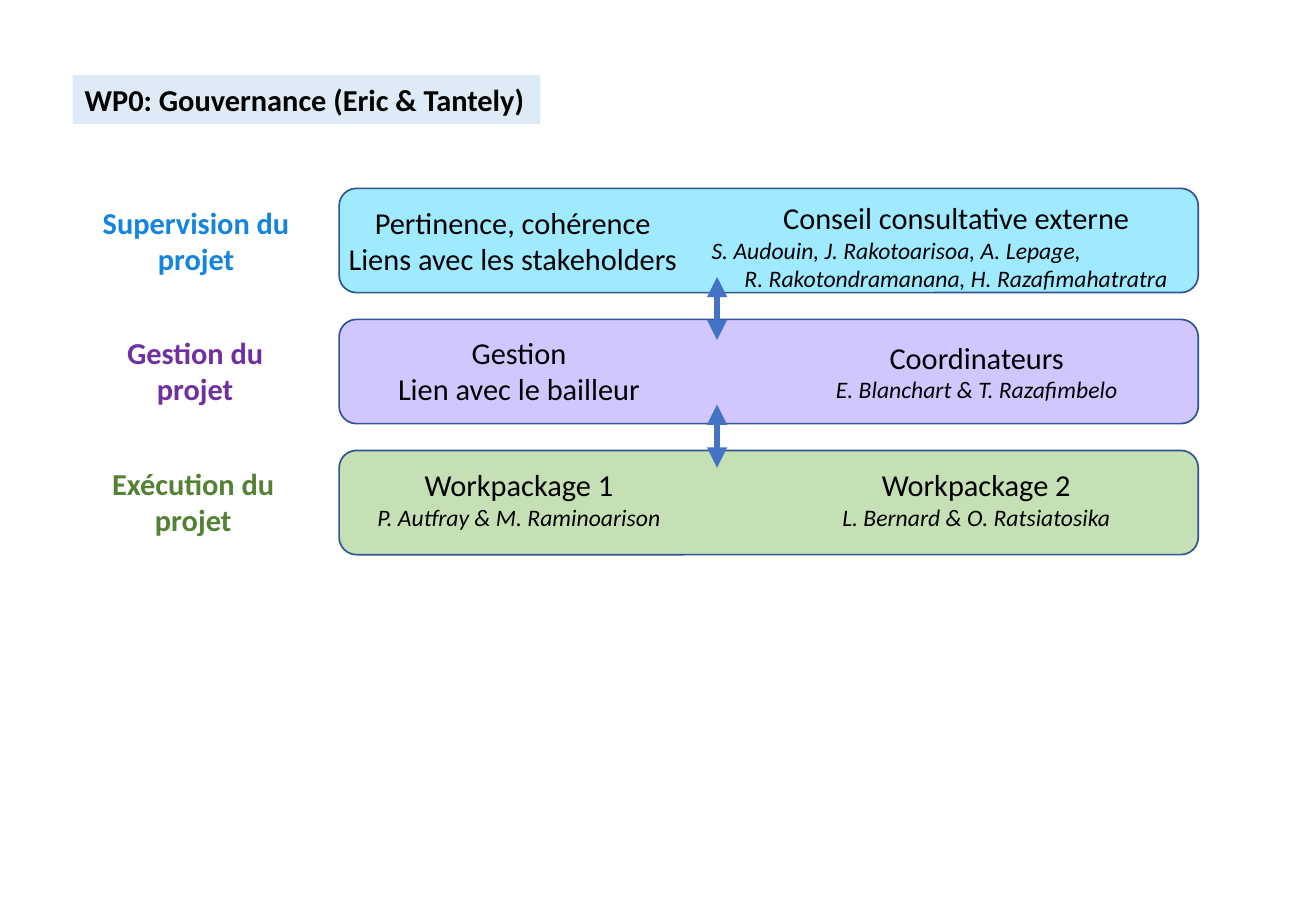
from typing import NamedTuple

from lxml import etree
from pptx import Presentation
from pptx.dml.color import RGBColor
from pptx.enum import shapes, text
from pptx.oxml import ns
from pptx.util import Cm, Pt

BLACK = RGBColor(0, 0, 0)
TITLE_FILL = RGBColor(0xDE, 0xEB, 0xF7)
BAND_EDGE = RGBColor(0x32, 0x54, 0x91)
ARROW = RGBColor(0x44, 0x72, 0xC4)
CYAN = RGBColor(0x9F, 0xEA, 0xFF)
LILAC = RGBColor(0xD1, 0xC7, 0xFE)
LEAF = RGBColor(0xC5, 0xE0, 0xB4)
BLUE = RGBColor(0x13, 0x84, 0xDF)
PURPLE = RGBColor(0x70, 0x30, 0xA0)
GREEN = RGBColor(0x54, 0x82, 0x35)

BAND_LEFT, BAND_TOP, BAND_WIDTH, BAND_HEIGHT = 7.09, 3.94, 17.96, 2.18
BAND_PITCH = 2.74
LABEL_WIDTH, ROLE_WIDTH, PEOPLE_WIDTH = 4.7, 7.9, 11.13
ARROW_X, ARROW_LENGTH = 7.9, 1.32

HEADING = {"size": 18}
NAMES = {"size": 14, "italic": True}


class Line(NamedTuple):
    wording: str
    style: dict
    left_indent: float | None = None


class Block(NamedTuple):
    center: float
    top: float
    lines: list


class Level(NamedTuple):
    fill: RGBColor
    color: RGBColor
    label: Block
    role: Block
    people: Block


LEVELS = [
    Level(CYAN, BLUE,
          Block(-2.99, 0.2, [Line("Supervision du projet", HEADING)]),
          Block(3.63, 0.2, [Line("Pertinence, cohérence", HEADING),
                            Line("Liens avec les stakeholders", HEADING)]),
          Block(12.9, 0.1, [Line("Conseil consultative externe", HEADING),
                            Line("S. Audouin, J. Rakotoarisoa, A. Lepage,", NAMES, 0.2),
                            Line("R. Rakotondramanana, H. Razafimahatratra", NAMES)])),
    Level(LILAC, PURPLE,
          Block(-3.01, 0.18, [Line("Gestion du projet", HEADING)]),
          Block(3.76, 0.18, [Line("Gestion", HEADING),
                             Line("Lien avec le bailleur", HEADING)]),
          Block(13.33, 0.28, [Line("Coordinateurs", HEADING),
                              Line("E. Blanchart & T. Razafimbelo", NAMES)])),
    Level(LEAF, GREEN,
          Block(-3.05, 0.18, [Line("Exécution du projet", HEADING)]),
          Block(3.76, 0.2, [Line("Workpackage 1", HEADING),
                            Line("P. Autfray & M. Raminoarison", NAMES)]),
          Block(13.32, 0.2, [Line("Workpackage 2", HEADING),
                             Line("L. Bernard & O. Ratsiatosika", NAMES)])),
]
ARROW_RISES = [0.33, 0.4]


def add_run(paragraph, wording, size, color=BLACK, bold=False, italic=False):
    run = paragraph.add_run()
    run.text = wording
    run.font.name = "Calibri"
    run.font.size = Pt(size)
    run.font.color.rgb = color
    run.font.bold = bold
    run.font.italic = italic


def add_block(slide, left, top, width, block, color=BLACK, bold=False):
    box = slide.shapes.add_textbox(
        Cm(left + block.center - width / 2), Cm(top + block.top), Cm(width), Cm(1.8))
    frame = box.text_frame
    frame.word_wrap = True
    for index, line in enumerate(block.lines):
        paragraph = frame.add_paragraph() if index else frame.paragraphs[0]
        paragraph.alignment = text.PP_ALIGN.CENTER
        if line.left_indent is not None:
            paragraph.alignment = text.PP_ALIGN.LEFT
            paragraph._p.get_or_add_pPr().set("marL", str(Cm(line.left_indent)))
        add_run(paragraph, line.wording, color=color, bold=bold, **line.style)


def add_title(slide, left, top, width, height):
    title = slide.shapes.add_shape(
        shapes.MSO_SHAPE.RECTANGLE, Cm(left), Cm(top), Cm(width), Cm(height))
    title.shadow.inherit = False
    title.fill.solid()
    title.fill.fore_color.rgb = TITLE_FILL
    title.line.fill.background()
    title.text_frame.word_wrap = False
    paragraph = title.text_frame.paragraphs[0]
    paragraph.alignment = text.PP_ALIGN.LEFT
    add_run(paragraph, "WP0: Gouvernance (Eric & Tantely)", 18, bold=True)


def add_level(slide, left, top, width, height, level):
    band = slide.shapes.add_shape(
        shapes.MSO_SHAPE.ROUNDED_RECTANGLE, Cm(left), Cm(top), Cm(width), Cm(height))
    band.shadow.inherit = False
    band.fill.solid()
    band.fill.fore_color.rgb = level.fill
    band.line.color.rgb = BAND_EDGE
    band.line.width = Pt(1)
    add_block(slide, left, top, LABEL_WIDTH, level.label, level.color, bold=True)
    add_block(slide, left, top, ROLE_WIDTH, level.role)
    add_block(slide, left, top, PEOPLE_WIDTH, level.people)


def add_exchange(slide, x, top, length):
    exchange = slide.shapes.add_connector(
        shapes.MSO_CONNECTOR.STRAIGHT, Cm(x), Cm(top), Cm(x), Cm(top + length))
    exchange.line.color.rgb = ARROW
    exchange.line.width = Pt(4)
    outline = exchange.line._get_or_add_ln()
    for end in ("a:headEnd", "a:tailEnd"):
        etree.SubElement(outline, ns.qn(end), type="triangle")
    etree.SubElement(exchange._element.spPr, ns.qn("a:effectLst"))


def main():
    deck = Presentation()
    deck.slide_width, deck.slide_height = Cm(27.51), Cm(19.05)
    slide = deck.slides.add_slide(deck.slide_layouts[6])
    add_title(slide, 1.52, 1.57, 9.78, 1.02)
    for index, level in enumerate(LEVELS):
        add_level(slide, BAND_LEFT, BAND_TOP + index * BAND_PITCH,
                  BAND_WIDTH, BAND_HEIGHT, level)
    for index, rise in enumerate(ARROW_RISES):
        band_bottom = BAND_TOP + index * BAND_PITCH + BAND_HEIGHT
        add_exchange(slide, BAND_LEFT + ARROW_X, band_bottom - rise, ARROW_LENGTH)
    deck.save("out.pptx")


if __name__ == "__main__":
    main()
